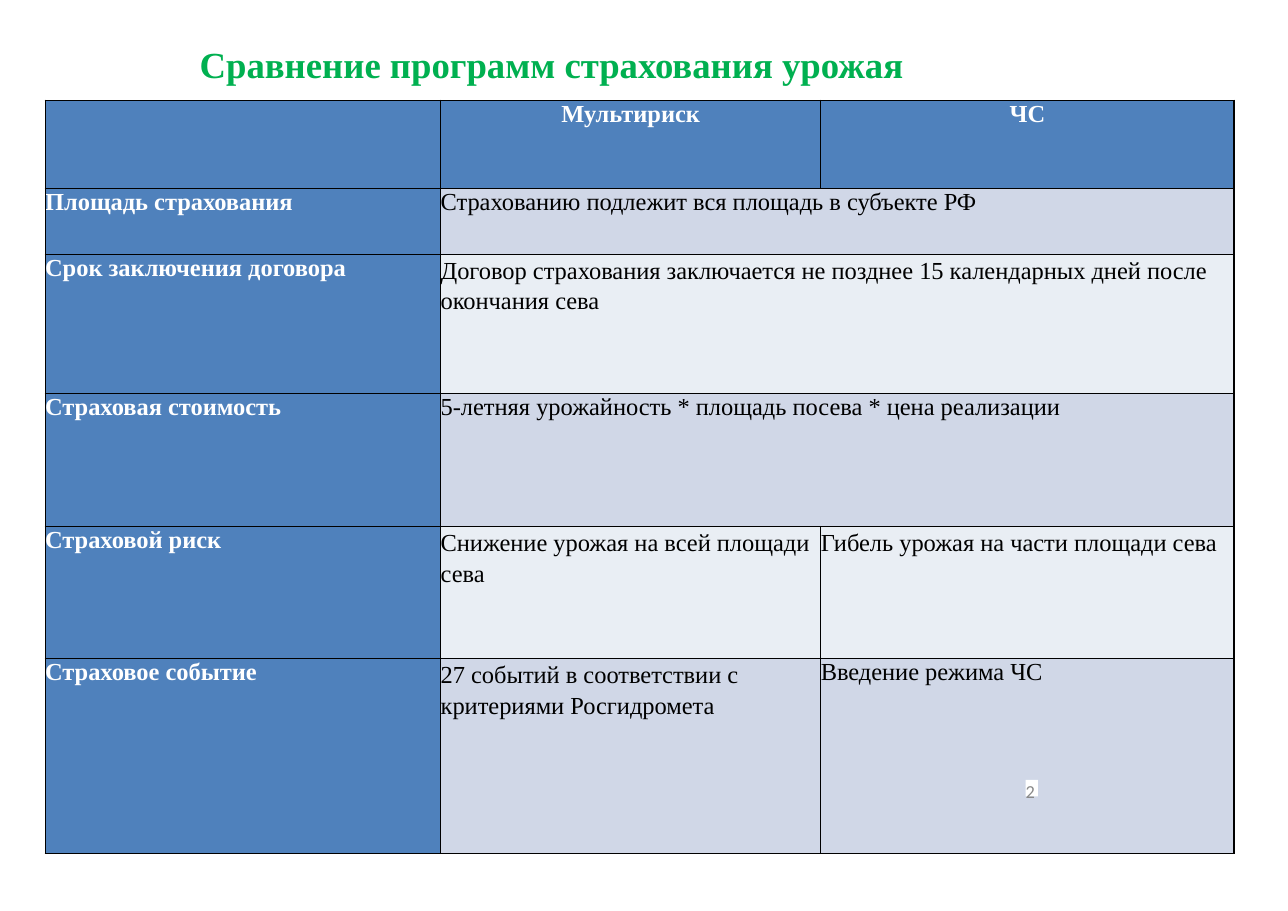
from dataclasses import dataclass

from lxml.etree import SubElement
from pptx import Presentation
from pptx.dml.color import RGBColor
from pptx.enum.text import MSO_ANCHOR as Anchor, MSO_AUTO_SIZE as AutoSize, PP_ALIGN as Align
from pptx.oxml.ns import qn
from pptx.util import Inches, Pt


@dataclass(frozen=True)
class Theme:
    serif: str = "Times New Roman"
    sans: str = "Calibri"
    title_size: int = 24
    table_size: int = 16
    number_size: int = 12
    border_width: float = 1
    loose_spacing: float = 1.12
    white: str = "FFFFFF"
    black: str = "000000"
    green: str = "00B050"
    gray: str = "898989"
    header: str = "4F81BC"
    bands: tuple = ("D0D7E7", "E9EEF4")


THEME = Theme()
TITLE = "Сравнение программ страхования урожая"
COLUMN_WIDTHS = (3.59, 3.45, 3.75)
ROW_HEIGHTS = (0.8, 0.6, 1.26, 1.21, 1.2, 1.77)
HEADINGS = ("", "Мультириск", "ЧС")
COMPARISON = (
    ("Площадь страхования", "Страхованию подлежит вся площадь в субъекте РФ"),
    ("Срок заключения договора",
     "Договор страхования заключается не позднее 15 календарных дней после окончания сева"),
    ("Страховая стоимость", "5-летняя урожайность * площадь посева * цена реализации"),
    ("Страховой риск", "Снижение урожая на всей площади сева",
     "Гибель урожая на части площади сева"),
    ("Страховое событие", "27 событий в соответствии с критериями Росгидромета",
     "Введение режима ЧС"),
)
LOOSE_CELLS = {(2, 1), (4, 1), (4, 2), (5, 1)}


def paint(item, color):
    item.fill.solid()
    item.fill.fore_color.rgb = RGBColor.from_string(color)


def write(frame, text, font, size, color, bold=False, align=Align.LEFT, spacing=1.0):
    para = frame.paragraphs[0]
    para.alignment = align
    para.line_spacing = spacing
    para.space_before = Pt(0)
    span = para.add_run()
    span.text = text
    span.font.name = font
    span.font.size = Pt(size)
    span.font.bold = bold
    span.font.color.rgb = RGBColor.from_string(color)


def place_label(box, left, top, width, height):
    box.left, box.top = Inches(left), Inches(top)
    box.width, box.height = Inches(width), Inches(height)
    paint(box, THEME.white)
    frame = box.text_frame
    frame.margin_left = frame.margin_right = frame.margin_top = frame.margin_bottom = 0
    frame.word_wrap = False
    frame.auto_size = AutoSize.NONE
    frame.vertical_anchor = Anchor.TOP
    return frame


def add_title(page):
    frame = place_label(page.shapes.title, 1.8, 0.38, 6.41, 0.34)
    write(frame, TITLE, THEME.serif, THEME.title_size, THEME.green, True, Align.CENTER)


def add_page_number(page):
    box = page.shapes.add_textbox(0, 0, 0, 0)
    frame = place_label(box, 9.31, 7.08, 0.11, 0.15)
    write(frame, "2", THEME.sans, THEME.number_size, THEME.gray)


def draw_borders(cell):
    properties = cell._tc.get_or_add_tcPr()
    for side in ("a:lnL", "a:lnR", "a:lnT", "a:lnB"):
        line = SubElement(properties, qn(side), w=str(Pt(THEME.border_width)))
        fill = SubElement(line, qn("a:solidFill"))
        SubElement(fill, qn("a:srgbClr"), val=THEME.black)


def style_cell(cell, color):
    cell.margin_left = cell.margin_right = cell.margin_top = cell.margin_bottom = 0
    cell.vertical_anchor = Anchor.TOP
    draw_borders(cell)
    paint(cell, color)


def add_comparison(page):
    table = page.shapes.add_table(
        len(ROW_HEIGHTS), len(COLUMN_WIDTHS), Inches(0.41), Inches(0.91),
        Inches(sum(COLUMN_WIDTHS)), Inches(sum(ROW_HEIGHTS))).table
    table.first_row = table.horz_banding = False
    for column, width in zip(table.columns, COLUMN_WIDTHS):
        column.width = Inches(width)
    for row, height in zip(table.rows, ROW_HEIGHTS):
        row.height = Inches(height)
    for r, texts in enumerate((HEADINGS, *COMPARISON)):
        for c in range(len(COLUMN_WIDTHS)):
            is_header = r == 0 or c == 0
            cell = table.cell(r, c)
            style_cell(cell, THEME.header if is_header else THEME.bands[(r - 1) % 2])
            if c < len(texts) and texts[c]:
                write(cell.text_frame, texts[c], THEME.serif, THEME.table_size,
                      THEME.white if is_header else THEME.black, is_header,
                      Align.CENTER if r == 0 else Align.LEFT,
                      THEME.loose_spacing if (r, c) in LOOSE_CELLS else 1.0)
        if len(texts) < len(COLUMN_WIDTHS):
            table.cell(r, 1).merge(table.cell(r, 2))


def main():
    deck = Presentation()
    deck.slide_width, deck.slide_height = Inches(11.69), Inches(8.27)
    page = deck.slides.add_slide(deck.slide_layouts.get_by_name("Title Only"))
    add_title(page)
    add_comparison(page)
    add_page_number(page)
    deck.save("out.pptx")


if __name__ == "__main__":
    main()
